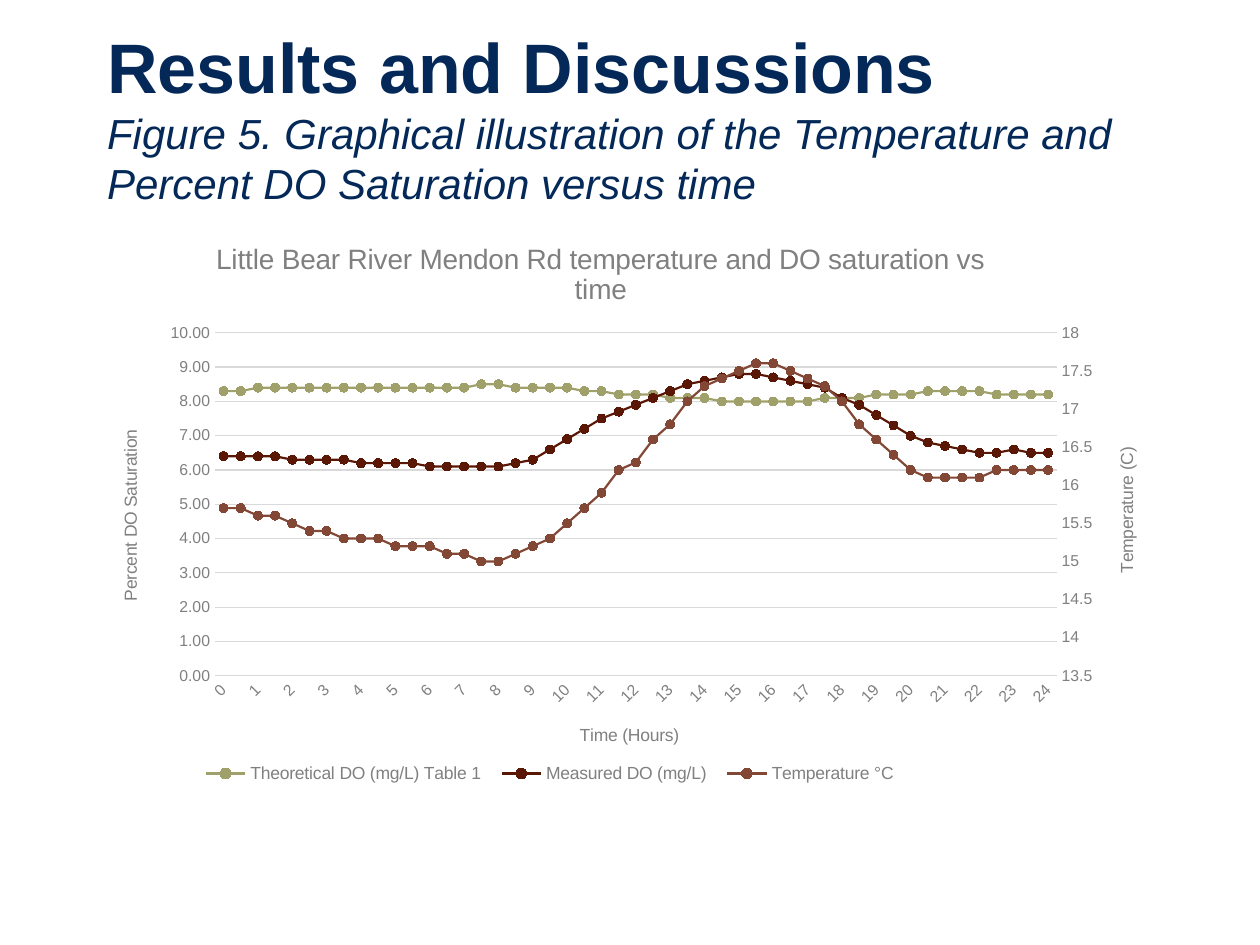
from copy import deepcopy

from lxml import etree
from pptx import Presentation
from pptx.chart.axis import ValueAxis
from pptx.chart.data import CategoryChartData
from pptx.dml.color import RGBColor
from pptx.enum.chart import XL_CHART_TYPE, XL_LEGEND_POSITION, XL_MARKER_STYLE, XL_TICK_MARK
from pptx.enum.text import MSO_ANCHOR, PP_ALIGN
from pptx.oxml.ns import qn
from pptx.util import Inches, Pt

LINE_MARKERS = XL_CHART_TYPE.LINE_MARKERS
BOTTOM = XL_LEGEND_POSITION.BOTTOM
CIRCLE = XL_MARKER_STYLE.CIRCLE
NO_TICK = XL_TICK_MARK.NONE
MIDDLE = MSO_ANCHOR.MIDDLE
LEFT = PP_ALIGN.LEFT

FONT = "Arial"
COLORS = {
    "heading": "042958",
    "label": "808080",
    "grid": "D9D9D9",
    "theoretical": "A0A16A",
    "measured": "5A1705",
    "temperature": "834736",
}

HOURS = [f"{half / 2:g}" for half in range(49)]
SERIES = [
    ("Theoretical DO (mg/L) Table 1", "theoretical", [
        8.3, 8.3, 8.4, 8.4, 8.4, 8.4, 8.4, 8.4, 8.4, 8.4, 8.4, 8.4, 8.4, 8.4, 8.4, 8.5, 8.5,
        8.4, 8.4, 8.4, 8.4, 8.3, 8.3, 8.2, 8.2, 8.2, 8.1, 8.1, 8.1, 8, 8, 8, 8, 8, 8, 8.1,
        8.1, 8.1, 8.2, 8.2, 8.2, 8.3, 8.3, 8.3, 8.3, 8.2, 8.2, 8.2, 8.2]),
    ("Measured DO (mg/L)", "measured", [
        6.4, 6.4, 6.4, 6.4, 6.3, 6.3, 6.3, 6.3, 6.2, 6.2, 6.2, 6.2, 6.1, 6.1, 6.1, 6.1, 6.1,
        6.2, 6.3, 6.6, 6.9, 7.2, 7.5, 7.7, 7.9, 8.1, 8.3, 8.5, 8.6, 8.7, 8.8, 8.8, 8.7, 8.6,
        8.5, 8.4, 8.1, 7.9, 7.6, 7.3, 7, 6.8, 6.7, 6.6, 6.5, 6.5, 6.6, 6.5, 6.5]),
    ("Temperature °C", "temperature", [
        15.7, 15.7, 15.6, 15.6, 15.5, 15.4, 15.4, 15.3, 15.3, 15.3, 15.2, 15.2, 15.2, 15.1,
        15.1, 15, 15, 15.1, 15.2, 15.3, 15.5, 15.7, 15.9, 16.2, 16.3, 16.6, 16.8, 17.1, 17.3,
        17.4, 17.5, 17.6, 17.6, 17.5, 17.4, 17.3, 17.1, 16.8, 16.6, 16.4, 16.2, 16.1, 16.1,
        16.1, 16.1, 16.2, 16.2, 16.2, 16.2]),
]


class SlideBuilder:
    def __init__(self, slide):
        self.slide = slide

    def style_font(self, font, size, color, bold=False, italic=False):
        font.name = FONT
        font.size = Pt(size)
        font.bold = bold
        font.italic = italic
        font.color.rgb = RGBColor.from_string(COLORS[color])

    def style_line(self, line, color, width):
        line.color.rgb = RGBColor.from_string(COLORS[color])
        line.width = Pt(width)

    def add_title(self, heading, caption):
        shape = self.slide.shapes.title
        shape.left, shape.top = Inches(0.75), Inches(0.5)
        shape.width, shape.height = Inches(8.5), Inches(1.5)
        shape.text_frame.vertical_anchor = MIDDLE
        paragraph = shape.text_frame.paragraphs[0]
        paragraph.alignment = LEFT
        for text, size, bold in ((heading, 40, True), (caption, 24, False)):
            run = paragraph.add_run()
            run.text = text
            self.style_font(run.font, size, "heading", bold, not bold)
            paragraph.add_line_break()
        etree.SubElement(paragraph._p, qn("a:endParaRPr")).set("sz", "4000")

    def write_chart_title(self, title, lines, size, x, y):
        frame = title.text_frame
        for index, text in enumerate(lines):
            paragraph = frame.add_paragraph() if index else frame.paragraphs[0]
            run = paragraph.add_run()
            run.text = text
            self.style_font(run.font, size, "label")
        self.place(title._element, "c:overlay", xMode="edge", yMode="edge", x=x, y=y)

    def style_axis(self, axis, title, rotation, x, y):
        axis.major_tick_mark = axis.minor_tick_mark = NO_TICK
        self.style_font(axis.tick_labels.font, 9, "label")
        self.write_chart_title(axis.axis_title, [title], 10, x, y)
        body = axis.axis_title.text_frame._txBody.find(qn("a:bodyPr"))
        body.set("rot", str(rotation * 60000))
        body.set("vert", "horz")

    def style_value_axis(self, axis, title, scale, number_format, x, y):
        self.style_axis(axis, title, -90, x, y)
        axis.minimum_scale, axis.maximum_scale, axis.major_unit = scale
        axis.tick_labels.number_format = number_format
        axis.tick_labels.number_format_is_linked = False
        axis.format.line.fill.background()

    def place(self, parent, before, **layout):
        for existing in parent.findall(qn("c:layout")):
            parent.remove(existing)
        element = etree.Element(qn("c:layout"))
        manual = etree.SubElement(element, qn("c:manualLayout"))
        for tag, value in layout.items():
            etree.SubElement(manual, qn(f"c:{tag}")).set("val", str(value))
        parent.find(qn(before)).addprevious(element)

    def move_to_right_axis(self, chart):
        plot = chart._chartSpace.find(f".//{qn('c:lineChart')}")
        category = chart.category_axis._element
        value = chart.value_axis._element
        right_plot, right_category, right_value = map(deepcopy, (plot, category, value))
        for item in right_plot.findall(qn("c:ser"))[:-1]:
            right_plot.remove(item)
        plot.remove(plot.findall(qn("c:ser"))[-1])
        plot.addnext(right_plot)
        value.addnext(right_value)
        right_value.addnext(right_category)
        for axis_id, number in zip(right_plot.findall(qn("c:axId")), ("5001", "5002")):
            axis_id.set("val", number)
        for axis, own, other in ((right_category, "5001", "5002"), (right_value, "5002", "5001")):
            axis.find(qn("c:axId")).set("val", own)
            axis.find(qn("c:crossAx")).set("val", other)
        right_category.find(qn("c:delete")).set("val", "1")
        right_value.find(qn("c:axPos")).set("val", "r")
        right_value.find(qn("c:crosses")).set("val", "max")
        axis = ValueAxis(right_value)
        axis.has_major_gridlines = False
        return axis

    def add_chart(self, title_lines):
        data = CategoryChartData()
        data.categories = HOURS
        for name, _, values in SERIES:
            data.add_series(name, values)
        chart = self.slide.shapes.add_chart(
            LINE_MARKERS, Inches(0.75), Inches(1.75), Inches(8.5), Inches(4.67), data).chart
        self.style_font(chart.font, 10, "label")
        chart.plots[0].vary_by_categories = False
        for series, (_, color, _) in zip(chart.plots[0].series, SERIES):
            series.smooth = False
            self.style_line(series.format.line, color, 1.25)
            series.marker.style = CIRCLE
            series.marker.size = 5
            series.marker.format.fill.solid()
            series.marker.format.fill.fore_color.rgb = RGBColor.from_string(COLORS[color])
            self.style_line(series.marker.format.line, color, 0.75)

        value_axis = chart.value_axis
        category_axis = chart.category_axis
        right_axis = self.move_to_right_axis(chart)
        self.style_value_axis(
            right_axis, "Temperature (C)", (13.5, 18, 0.5), "General", 0.95, 0.38)
        self.style_value_axis(
            value_axis, "Percent DO Saturation", (0, 10, 1), "0.00", 0.02, 0.35)
        self.style_line(value_axis.major_gridlines.format.line, "grid", 0.75)
        self.style_axis(category_axis, "Time (Hours)", 0, 0.45, 0.85)
        self.style_line(category_axis.format.line, "grid", 0.75)
        labels = category_axis._element.find(qn("c:txPr")).find(qn("a:bodyPr"))
        labels.set("rot", str(-45 * 60000))
        skip = etree.Element(qn("c:tickLblSkip"))
        skip.set("val", "2")
        category_axis._element.find(qn("c:noMultiLvlLbl")).addprevious(skip)

        self.write_chart_title(chart.chart_title, title_lines, 16, 0.11, 0.03)
        chart.has_legend = True
        chart.legend.position = BOTTOM
        chart.legend.include_in_layout = False
        self.style_font(chart.legend.font, 10, "label")
        self.place(chart.legend._element, "c:overlay",
                   xMode="edge", yMode="edge", x=0.09, y=0.91, w=0.67, h=0.06)
        self.place(chart._chartSpace.find(f".//{qn('c:plotArea')}"), "c:lineChart",
                   layoutTarget="inner", xMode="edge", yMode="edge",
                   x=0.1125, y=0.191, w=0.786, h=0.583)


def main():
    presentation = Presentation()
    presentation.slide_width, presentation.slide_height = Inches(10), Inches(7.5)
    builder = SlideBuilder(presentation.slides.add_slide(presentation.slide_layouts[5]))
    builder.add_title(
        "Results and Discussions",
        "Figure 5. Graphical illustration of the Temperature and Percent DO Saturation versus time")
    builder.add_chart(["Little Bear River Mendon Rd temperature and DO saturation vs", "time"])
    presentation.save("out.pptx")


if __name__ == "__main__":
    main()
